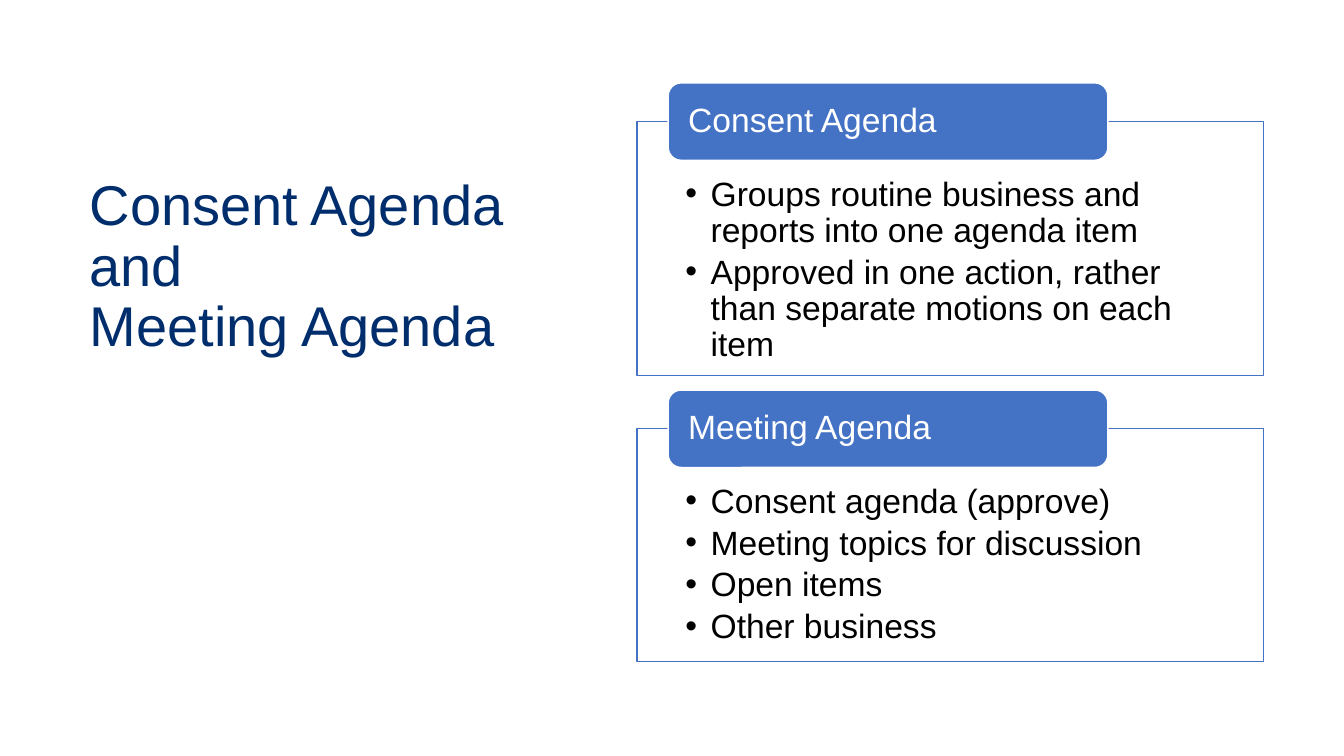
from lxml import etree
from pptx import Presentation
from pptx import util as u
from pptx.dml.color import RGBColor
from pptx.enum import shapes, text
from pptx.oxml import ns

NAVY = RGBColor(0x00, 0x2E, 0x6D)
BLUE = RGBColor(0x44, 0x72, 0xC4)
WHITE = RGBColor(0xFF, 0xFF, 0xFF)
BLACK = RGBColor(0x00, 0x00, 0x00)


def write(p, content, size=24, color=BLACK, after=0, bullet=False):
    """Fill a paragraph; a vertical tab in the content breaks the line."""
    p.alignment = text.PP_ALIGN.LEFT
    p.line_spacing = 0.9
    p.space_before = u.Pt(0)
    p.space_after = u.Pt(after)
    if bullet:
        pPr = p._p.get_or_add_pPr()
        pPr.set("marL", str(u.Cm(0.64)))
        pPr.set("indent", str(-u.Cm(0.64)))
        etree.SubElement(pPr, ns.qn("a:buFont")).set("typeface", "Arial")
        etree.SubElement(pPr, ns.qn("a:buChar")).set("char", "•")
    for i, line in enumerate(content.split("\v")):
        if i:
            p.add_line_break()
        r = p.add_run()
        r.text = line
        r.font.name = "Arial"
        r.font.size = u.Pt(size)
        r.font.color.rgb = color


class Deck:
    def __init__(self, prs):
        self.s = prs.slides.add_slide(prs.slide_layouts[5])

    def frame(self, sp, insets, anchor):
        tf = sp.text_frame
        tf.word_wrap = True
        tf.auto_size = text.MSO_AUTO_SIZE.NONE
        tf.vertical_anchor = anchor
        (tf.margin_left, tf.margin_top,
         tf.margin_right, tf.margin_bottom) = [u.Cm(n) for n in insets]
        return tf

    def title(self, content, left, top, width, height):
        sp = self.s.shapes.title
        sp.left, sp.top = u.Cm(left), u.Cm(top)
        sp.width, sp.height = u.Cm(width), u.Cm(height)
        tf = self.frame(sp, (0.25, 0.13, 0.25, 0.13), text.MSO_ANCHOR.TOP)
        write(tf.paragraphs[0], content, size=40, color=NAVY)

    def box(self, kind, left, top, width, height, fill, line):
        sp = self.s.shapes.add_shape(
            kind, u.Cm(left), u.Cm(top), u.Cm(width), u.Cm(height))
        sp.shadow.inherit = False
        sp.fill.solid()
        sp.fill.fore_color.rgb = fill
        sp.line.color.rgb = line
        sp.line.width = u.Pt(1)
        return sp

    def panel(self, heading, items, top, height, left=16.05):
        # Outlined body with bullets
        sp = self.box(shapes.MSO_SHAPE.RECTANGLE, left, top, 15.8, height,
                      WHITE, BLUE)
        tf = self.frame(sp, (1.22, 1.4, 1.22, 0.48), text.MSO_ANCHOR.TOP)
        for i, item in enumerate(items):
            p = tf.add_paragraph() if i else tf.paragraphs[0]
            write(p, item, after=4, bullet=True)
        # Heading tab across the top edge
        sp = self.box(shapes.MSO_SHAPE.ROUNDED_RECTANGLE, left + 0.79,
                      top - 0.97, 11.08, 1.95, BLUE, WHITE)
        tf = self.frame(sp, (0.41, 0, 0.41, 0), text.MSO_ANCHOR.MIDDLE)
        write(tf.paragraphs[0], heading, color=WHITE)


def main():
    prs = Presentation()
    prs.slide_width, prs.slide_height = u.Cm(33.87), u.Cm(19.05)
    deck = Deck(prs)

    # Title on the left
    deck.title("Consent Agenda and\vMeeting Agenda", 2.01, 4.34, 11.25, 6.83)

    # Agenda panels on the right
    deck.panel("Consent Agenda", [
        "Groups routine business and reports into one agenda item",
        "Approved in one action, rather than separate motions on each item",
    ], top=3.06, height=6.4)
    deck.panel("Meeting Agenda", [
        "Consent agenda (approve)",
        "Meeting topics for discussion",
        "Open items",
        "Other business",
    ], top=10.8, height=5.87)

    prs.save("out.pptx")


if __name__ == "__main__":
    main()
